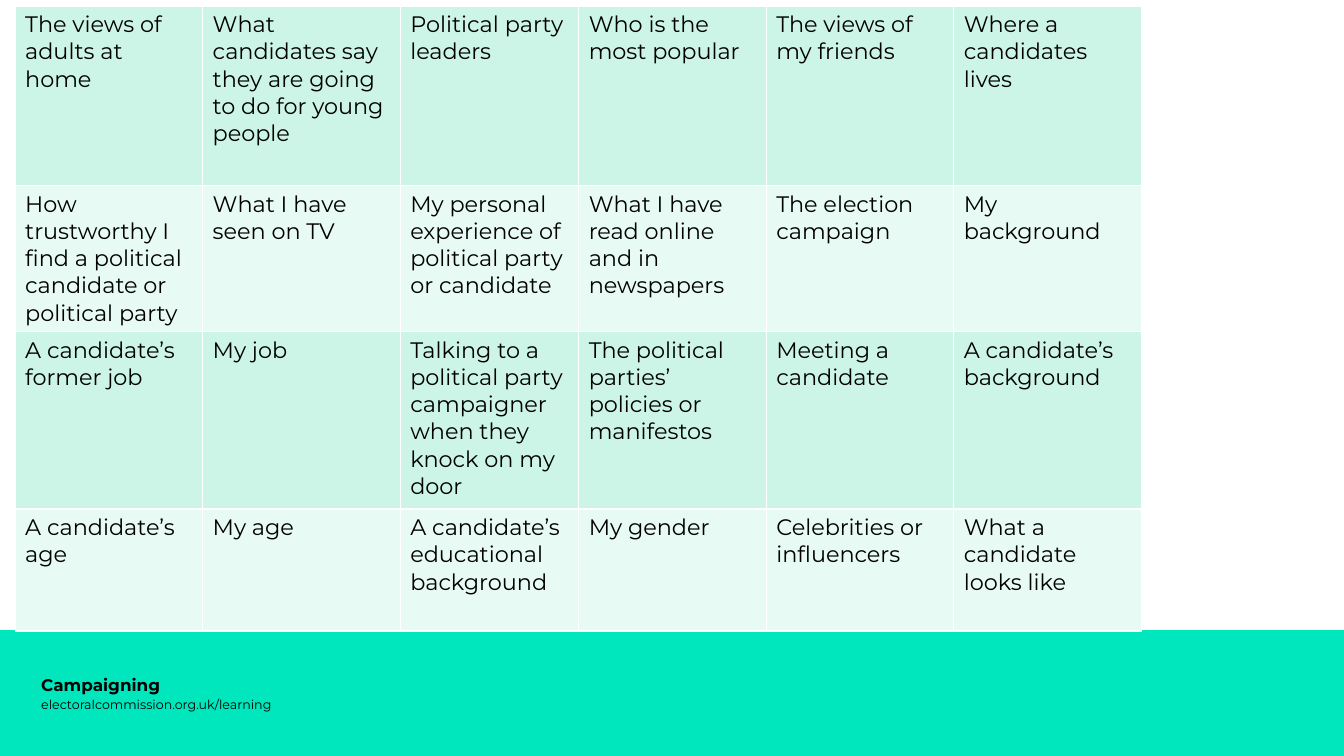
import pptx
import pptx.dml.color
import pptx.enum.shapes
import pptx.enum.text
import pptx.oxml
import pptx.oxml.ns
import pptx.util

PX = 9144
INFLUENCES = [
    ["The views of adults at home", "What candidates say they are going to do for young people",
     "Political party leaders", "Who is the most popular", "The views of my friends",
     "Where a candidates lives"],
    ["How trustworthy I find a political candidate or political party", "What I have seen on TV",
     "My personal experience of political party or candidate",
     "What I have read online and in newspapers", "The election campaign", "My background"],
    ["A candidate’s former job", "My job",
     "Talking to a political party campaigner when they knock on my door",
     "The political parties’ policies or manifestos", "Meeting a candidate",
     "A candidate’s background"],
    ["A candidate’s age", "My age", "A candidate’s educational background", "My gender",
     "Celebrities or influencers", "What a candidate looks like"],
]
COLUMN_WIDTHS = [186, 196, 177, 186, 186, 186]
ROW_HEIGHTS = [178, 145, 176, 121]
BAND_COLOURS = ["CCF5E8", "E7FAF4"]


def colour(value):
    return pptx.dml.color.RGBColor.from_string(value)


def box(*lengths):
    return [pptx.util.Emu(length * PX) for length in lengths]


def apply(target, values):
    for name, value in values.items():
        setattr(target, name, value)


class SlideBuilder:
    """Draws styled elements on the current slide."""

    font_name = "Montserrat"
    text_colour = "000000"
    border_colour = "FFFFFF"

    def __init__(self, slide):
        self.slide = slide

    def fill_text(self, text_frame, text, size, bold=False):
        paragraph = text_frame.paragraphs[0]
        run = paragraph.add_run()
        run.text = text
        apply(run.font, {"name": self.font_name, "size": pptx.util.Pt(size), "bold": bold})
        run.font.color.rgb = colour(self.text_colour)

    def band(self, bounds, fill):
        shape = self.slide.shapes.add_shape(
            pptx.enum.shapes.MSO_SHAPE.RECTANGLE, *box(*bounds))
        shape.shadow.inherit = False
        shape.fill.solid()
        shape.fill.fore_color.rgb = colour(fill)
        shape.line.fill.background()

    def text(self, bounds, text, size, bold=False):
        text_frame = self.slide.shapes.add_textbox(*box(*bounds)).text_frame
        apply(text_frame, {"word_wrap": True,
                           "vertical_anchor": pptx.enum.text.MSO_ANCHOR.MIDDLE})
        self.fill_text(text_frame, text, size, bold)

    def border(self, cell):
        properties = cell._tc.get_or_add_tcPr()
        for side in ("lnL", "lnR", "lnT", "lnB"):
            properties.append(pptx.oxml.parse_xml(
                f'<a:{side} {pptx.oxml.ns.nsdecls("a")} w="12700"><a:solidFill>'
                f'<a:srgbClr val="{self.border_colour}"/></a:solidFill></a:{side}>'))

    def table(self, left, top, widths, heights, rows, fills, size):
        bounds = box(left, top, sum(widths), sum(heights))
        table = self.slide.shapes.add_table(len(rows), len(widths), *bounds).table
        apply(table, {"first_row": False, "horz_banding": False})
        for column, width in zip(table.columns, box(*widths)):
            column.width = width
        for row, height in zip(table.rows, box(*heights)):
            row.height = height
        for row_index, texts in enumerate(rows):
            for column_index, text in enumerate(texts):
                cell = table.cell(row_index, column_index)
                self.border(cell)
                cell.fill.solid()
                cell.fill.fore_color.rgb = colour(fills[row_index % len(fills)])
                self.fill_text(cell.text_frame, text, size)


def main():
    presentation = pptx.Presentation()
    width, height = box(1333, 750)
    apply(presentation, {"slide_width": width, "slide_height": height})
    builder = SlideBuilder(presentation.slides.add_slide(presentation.slide_layouts[6]))
    builder.band((0, 625, 1333, 125), "00E7BD")
    builder.text((31, 679, 765, 40), "electoralcommission.org.uk/learning", 9)
    builder.text((31, 659, 765, 40), "Campaigning", 12, bold=True)
    builder.table(15, 6, COLUMN_WIDTHS, ROW_HEIGHTS, INFLUENCES, BAND_COLOURS, 16)
    presentation.save("out.pptx")


if __name__ == "__main__":
    main()
